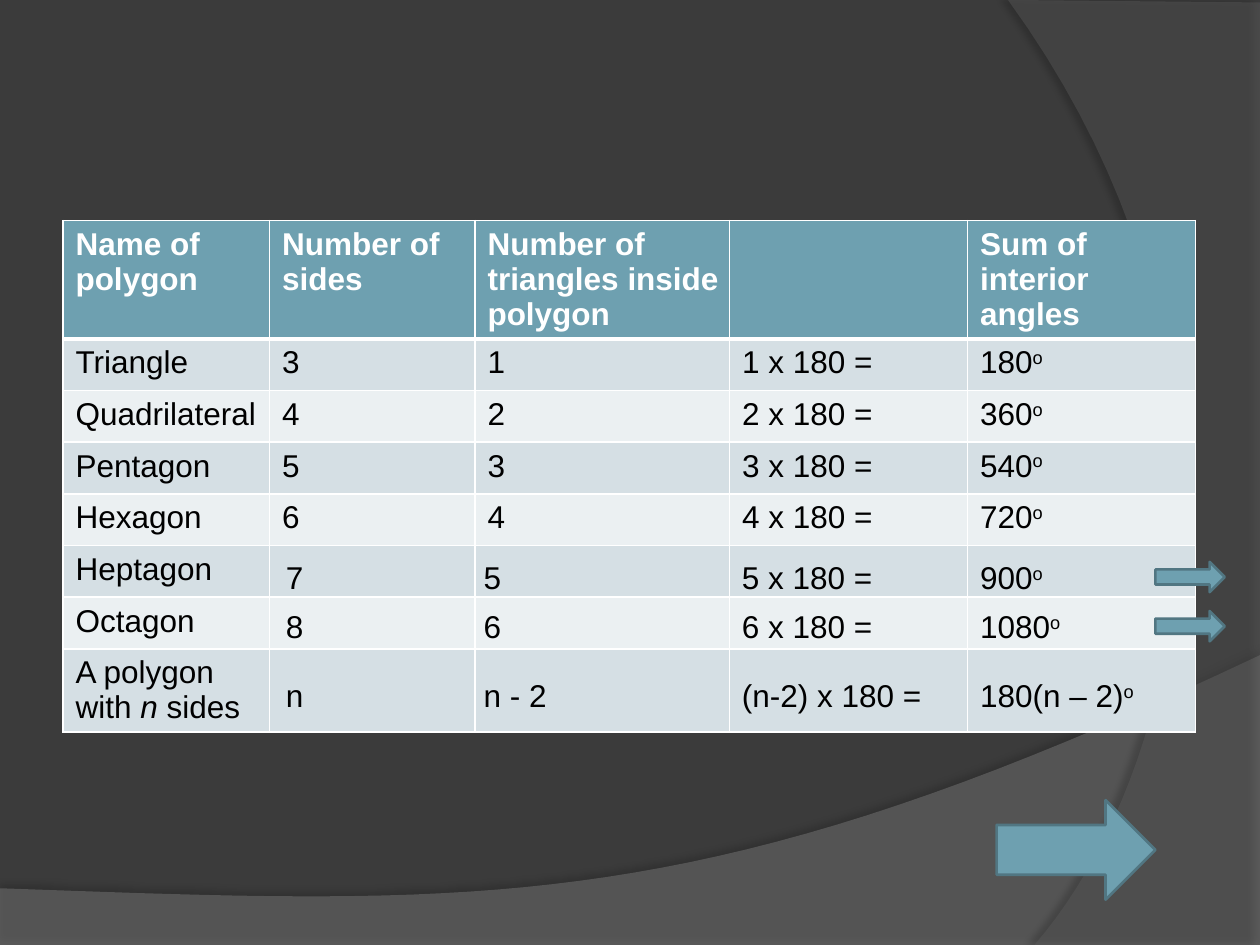
from pptx import Presentation, util as u
from pptx.dml.color import RGBColor
from pptx.enum import shapes, text
from pptx.oxml import parse_xml
from pptx.oxml.ns import nsdecls, qn
from lxml import etree

BACKDROP = RGBColor(0x3B, 0x3B, 0x3B)
LOWER_SWEEP = RGBColor(0x7F, 0x7F, 0x7F)
SIDE_SWEEP = RGBColor(0x5E, 0x5E, 0x5E)
TEAL = RGBColor(0x6E, 0xA0, 0xB0)
TEAL_EDGE = RGBColor(0x51, 0x76, 0x82)
BAND_DARK = RGBColor(0xD5, 0xDF, 0xE4)
BAND_LIGHT = RGBColor(0xEB, 0xF0, 0xF2)
WHITE = RGBColor(0xFF, 0xFF, 0xFF)
BLACK = RGBColor(0, 0, 0)

WIDTH, HEIGHT = 10, 7.5
COLUMNS = [1.64, 1.63, 2.02, 1.89, 1.81]
ROW_HEIGHT = 0.41
HEADINGS = ["Name of polygon", "Number of sides",
            "Number of triangles inside polygon", "", "Sum of interior angles"]
POLYGONS = ["Triangle", "Quadrilateral", "Pentagon", "Hexagon", "Heptagon", "Octagon"]
FILLED_IN = 4  # polygons whose answers stand in the table itself


def inches(*lengths):
    return [u.Inches(length) for length in lengths]


def write(frame, *parts, size=18, color=BLACK, bold=False):
    """Write runs; a part is a string or a (string, style) pair."""
    paragraph = frame.paragraphs[0]
    for part in parts:
        words, style = part if isinstance(part, tuple) else (part, None)
        run = paragraph.add_run()
        run.text = words
        run.font.name, run.font.size = "Arial", u.Pt(size)
        run.font.color.rgb, run.font.bold = color, bold
        if style == "italic":
            run.font.italic = True
        elif style == "raised":
            run.font._element.set("baseline", "30000")


def degrees(value):
    return [str(value), ("o", "raised")]


def answers(sides):
    triangles = sides - 2
    return [[str(sides)], [str(triangles)], [f"{triangles} x 180 ="],
            degrees(triangles * 180)]


def bezier(start, c1, c2, end, steps=40):
    for step in range(1, steps + 1):
        t = step / steps
        weights = ((1 - t) ** 3, 3 * t * (1 - t) ** 2, 3 * t * t * (1 - t), t ** 3)
        yield tuple(sum(w * p[axis] for w, p in zip(weights, (start, c1, c2, end)))
                    for axis in (0, 1))


def sweep(slide, points, color, opacity, shadow_opacity, blur, distance, angle):
    """Translucent curved panel with a soft shadow."""
    points = [inches(*point) for point in points]
    builder = slide.shapes.build_freeform(*points[0])
    builder.add_line_segments(points[1:], close=True)
    panel = builder.convert_to_shape()
    panel.fill.solid()
    panel.fill.fore_color.rgb = color
    tint = panel._element.spPr.find(qn("a:solidFill"))[0]
    etree.SubElement(tint, qn("a:alpha")).set("val", str(opacity * 1000))
    panel.line.fill.background()
    panel._element.spPr.append(parse_xml(
        f'<a:effectLst {nsdecls("a")}><a:outerShdw blurRad="{u.Pt(blur)}" '
        f'dist="{u.Pt(distance)}" dir="{angle * 60000}" algn="ctr" rotWithShape="0">'
        f'<a:srgbClr val="000000"><a:alpha val="{shadow_opacity * 1000}"/></a:srgbClr>'
        '</a:outerShdw></a:effectLst>'))


def backdrop(slide):
    slide.background.fill.solid()
    slide.background.fill.fore_color.rgb = BACKDROP
    crest = (WIDTH, 5.2)
    sweep(slide, [(0, 7.05), (0, HEIGHT), (WIDTH, HEIGHT), crest,
                  *bezier(crest, (5.59, 7.29), (3.91, 7.19), (0, 7.05))],
          LOWER_SWEEP, 45, 35, 4, 3.5, 270)
    foot = (8.21, HEIGHT)
    sweep(slide, [(WIDTH, 0.02), (WIDTH, HEIGHT), foot,
                  *bezier(foot, (9.35, 6.19), (10.18, 3), (8, 0))],
          SIDE_SWEEP, 40, 45, 4, 4, 180)


def style_cell(cell, color, bottom=1, top=1):
    properties = cell._tc.get_or_add_tcPr()
    for side, width in (("L", 1), ("R", 1), ("T", top), ("B", bottom)):
        properties.append(parse_xml(
            f'<a:ln{side} {nsdecls("a")} w="{u.Pt(width)}"><a:solidFill>'
            f'<a:srgbClr val="{WHITE}"/></a:solidFill></a:ln{side}>'))
    cell.fill.solid()
    cell.fill.fore_color.rgb = color
    cell.margin_right = u.Inches(0.05)  # keeps the longest name on one line


def polygon_table(slide, left, top):
    rows = [[[heading] if heading else [] for heading in HEADINGS]]
    for index, name in enumerate(POLYGONS):
        found = answers(index + 3) if index < FILLED_IN else [[]] * 4
        rows.append([[name], *found])
    rows.append([["A polygon with ", ("n", "italic"), " sides"], *[[]] * 4])

    box = inches(left, top, sum(COLUMNS), ROW_HEIGHT * len(rows))
    table = slide.shapes.add_table(len(rows), len(COLUMNS), *box).table
    for column, width in zip(table.columns, COLUMNS):
        column.width = u.Inches(width)
    for r, row in enumerate(rows):
        header = r == 0
        band = TEAL if header else BAND_DARK if r % 2 else BAND_LIGHT
        for c, parts in enumerate(row):
            cell = table.cell(r, c)
            style_cell(cell, band, bottom=3 if header else 1, top=3 if r == 1 else 1)
            write(cell.text_frame, *parts, color=WHITE if header else BLACK, bold=header)


def revealed_answers(slide):
    """Answers laid over the last three rows of the table."""
    lines = {4.38: answers(7), 4.77: answers(8),
             5.32: [["n"], ["n - 2"], ["(n-2) x 180 ="], degrees("180(n – 2)")]}
    places = [(2.17, 0.63), (3.74, 0.89), (5.79, 1.73), (7.68, 1.81)]
    for top, line in lines.items():
        for (left, width), parts in zip(places, line):
            answer = slide.shapes.add_textbox(*inches(left, top, width, 0.4))
            answer.text_frame.word_wrap = True
            answer.text_frame.auto_size = text.MSO_AUTO_SIZE.SHAPE_TO_FIT_TEXT
            write(answer.text_frame, *parts)


def next_arrow(slide, left, top, width, height):
    arrow = slide.shapes.add_shape(shapes.MSO_SHAPE.RIGHT_ARROW,
                                   *inches(left, top, width, height))
    arrow.shadow.inherit = False
    arrow.fill.solid()
    arrow.fill.fore_color.rgb = TEAL
    arrow.line.color.rgb = TEAL_EDGE
    arrow.line.width = u.Pt(1.5)


def main():
    deck = Presentation()
    deck.slide_width, deck.slide_height = inches(WIDTH, HEIGHT)
    slide = deck.slides.add_slide(deck.slide_layouts[6])
    backdrop(slide)
    polygon_table(slide, 0.5, 1.75)
    revealed_answers(slide)
    # Two row arrows and the large one to the next slide
    for top in (4.46, 4.85):
        next_arrow(slide, 9.17, top, 0.55, 0.24)
    next_arrow(slide, 7.91, 6.35, 1.26, 0.79)
    deck.save("out.pptx")


if __name__ == "__main__":
    main()
